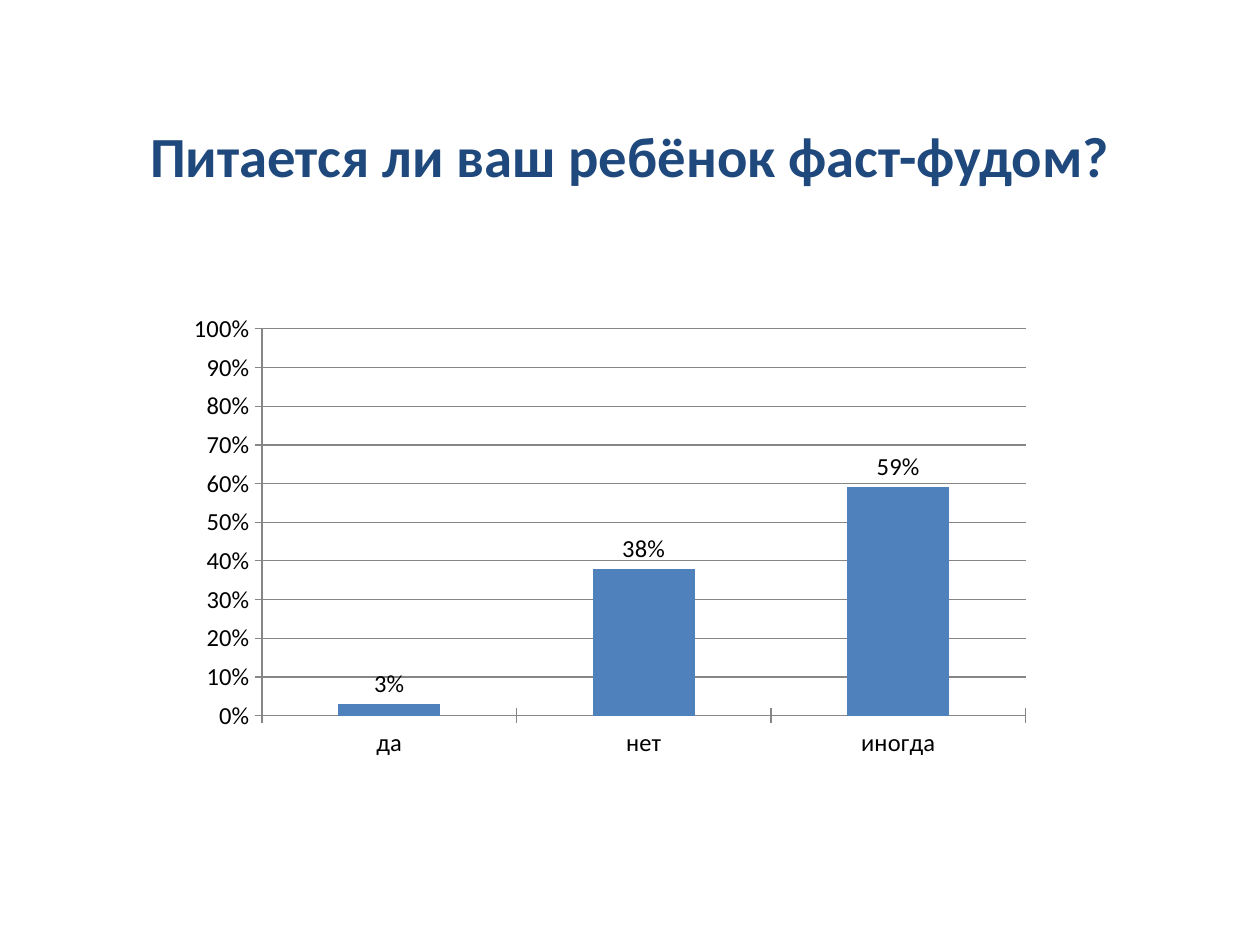
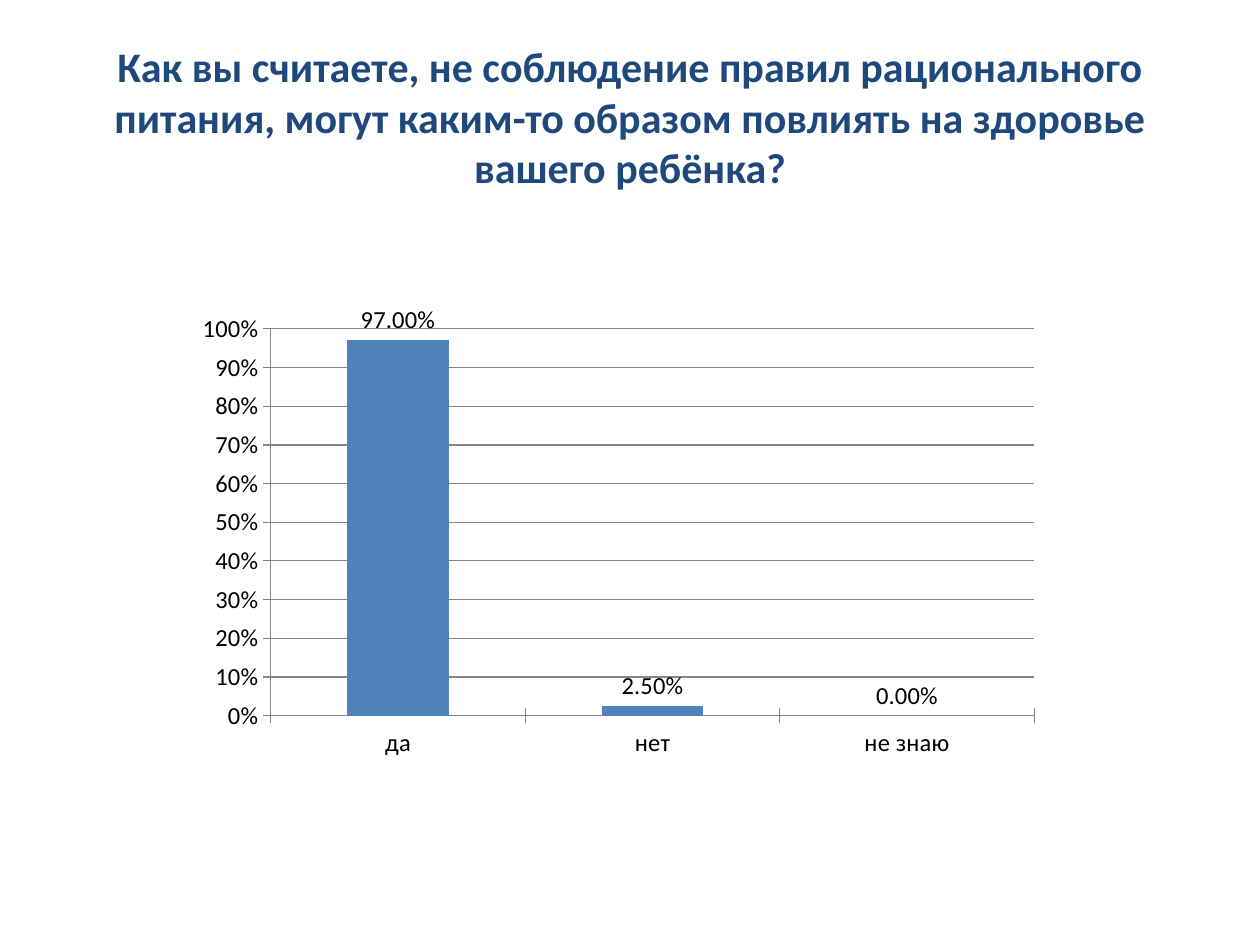
from dataclasses import dataclass

from pptx import Presentation
from pptx.chart.data import CategoryChartData
from pptx.dml.color import RGBColor
from pptx.enum.chart import XL_CHART_TYPE, XL_LABEL_POSITION, XL_TICK_MARK
from pptx.enum.text import MSO_ANCHOR, PP_ALIGN
from pptx.oxml import parse_xml
from pptx.oxml.ns import nsdecls
from pptx.util import Inches, Pt

# Content: one survey question per slide
QUESTIONS = [
    {
        "title": "Питается ли ваш ребёнок фаст-фудом?",
        "title_size": 32.4,
        "title_anchor": MSO_ANCHOR.BOTTOM,
        "chart_left": 1.41,
        "answers": {"да": 0.03, "нет": 0.38, "иногда": 0.59},
        "label_format": "0%",
    },
    {
        "title": "Как вы считаете, не соблюдение правил рационального питания, "
                 "могут каким-то образом повлиять на здоровье вашего ребёнка?",
        "title_size": 24,
        "title_anchor": MSO_ANCHOR.MIDDLE,
        "chart_left": 1.48,
        "answers": {"да": 0.97, "нет": 0.025, "не знаю": 0},
        "label_format": "0.00%",
    },
]


@dataclass(frozen=True)
class Theme:
    font: str = "Calibri"
    title: RGBColor = RGBColor(0x1F, 0x49, 0x7D)
    bar: RGBColor = RGBColor(0x4F, 0x81, 0xBD)
    line: RGBColor = RGBColor(0x86, 0x86, 0x86)
    text: RGBColor = RGBColor(0, 0, 0)
    chart_size: float = 14
    line_width: float = 0.75


THEME = Theme()

# Layout in inches: left, top, width, height
TITLE_BOX = (0.5, 0.3, 9, 1.25)
CHART_TOP, CHART_WIDTH, CHART_HEIGHT = 2.42, 6.87, 3.67
PLOT_AREA = (0.67, 0.19, 6.06, 3.07)  # measured from the chart's corner


def add_title(slide, question):
    shape = slide.shapes.add_textbox(*map(Inches, TITLE_BOX))
    text_frame = shape.text_frame
    text_frame.word_wrap = True
    text_frame.vertical_anchor = question["title_anchor"]
    text_frame.text = question["title"]
    paragraph = text_frame.paragraphs[0]
    paragraph.alignment = PP_ALIGN.CENTER
    font = paragraph.runs[0].font
    font.name, font.size, font.bold = THEME.font, Pt(question["title_size"]), True
    font.color.rgb = THEME.title


def style_font(font):
    font.name, font.size = THEME.font, Pt(THEME.chart_size)
    font.color.rgb = THEME.text


def style_line(line):
    line.color.rgb = THEME.line
    line.width = Pt(THEME.line_width)


def fix_plot_area(plot):
    """Place the axes' inner rectangle as fractions of the chart."""
    sizes = (CHART_WIDTH, CHART_HEIGHT) * 2
    modes = "".join(f'<c:{side}Mode val="edge"/>' for side in "xy")
    places = "".join(
        f'<c:{side} val="{length / size:.4f}"/>'
        for side, length, size in zip("xywh", PLOT_AREA, sizes)
    )
    plot._element.addprevious(parse_xml(
        f'<c:layout {nsdecls("c")}><c:manualLayout><c:layoutTarget val="inner"/>'
        f"{modes}{places}</c:manualLayout></c:layout>"
    ))


def add_answer_chart(slide, question):
    answers = question["answers"]
    chart_data = CategoryChartData()
    chart_data.categories = list(answers)
    chart_data.add_series("Series 1", list(answers.values()))
    box = (question["chart_left"], CHART_TOP, CHART_WIDTH, CHART_HEIGHT)
    chart = slide.shapes.add_chart(
        XL_CHART_TYPE.COLUMN_CLUSTERED, *map(Inches, box), chart_data
    ).chart
    chart.has_title = False
    chart.has_legend = False
    style_font(chart.font)

    # Axes
    for axis in (chart.category_axis, chart.value_axis):
        axis.major_tick_mark = XL_TICK_MARK.CROSS
        axis.minor_tick_mark = XL_TICK_MARK.NONE
        style_font(axis.tick_labels.font)
        style_line(axis.format.line)
    value_axis = chart.value_axis
    value_axis.minimum_scale, value_axis.maximum_scale = 0, 1
    value_axis.major_unit = 0.1
    value_axis.has_major_gridlines = True
    style_line(value_axis.major_gridlines.format.line)
    value_axis.tick_labels.number_format = "0%"
    value_axis.tick_labels.number_format_is_linked = False

    # Columns and their labels
    plot = chart.plots[0]
    fix_plot_area(plot)
    plot.vary_by_categories = False
    plot.gap_width = 150
    fill = plot.series[0].format.fill
    fill.solid()
    fill.fore_color.rgb = THEME.bar
    plot.has_data_labels = True
    labels = plot.data_labels
    labels.show_value = True
    labels.position = XL_LABEL_POSITION.OUTSIDE_END
    labels.number_format = question["label_format"]
    labels.number_format_is_linked = False
    style_font(labels.font)


def main():
    presentation = Presentation()
    presentation.slide_width, presentation.slide_height = Inches(10), Inches(7.5)
    blank_layout = presentation.slide_layouts[6]
    for question in QUESTIONS:
        slide = presentation.slides.add_slide(blank_layout)
        add_title(slide, question)
        add_answer_chart(slide, question)
    presentation.save("out.pptx")


if __name__ == "__main__":
    main()
